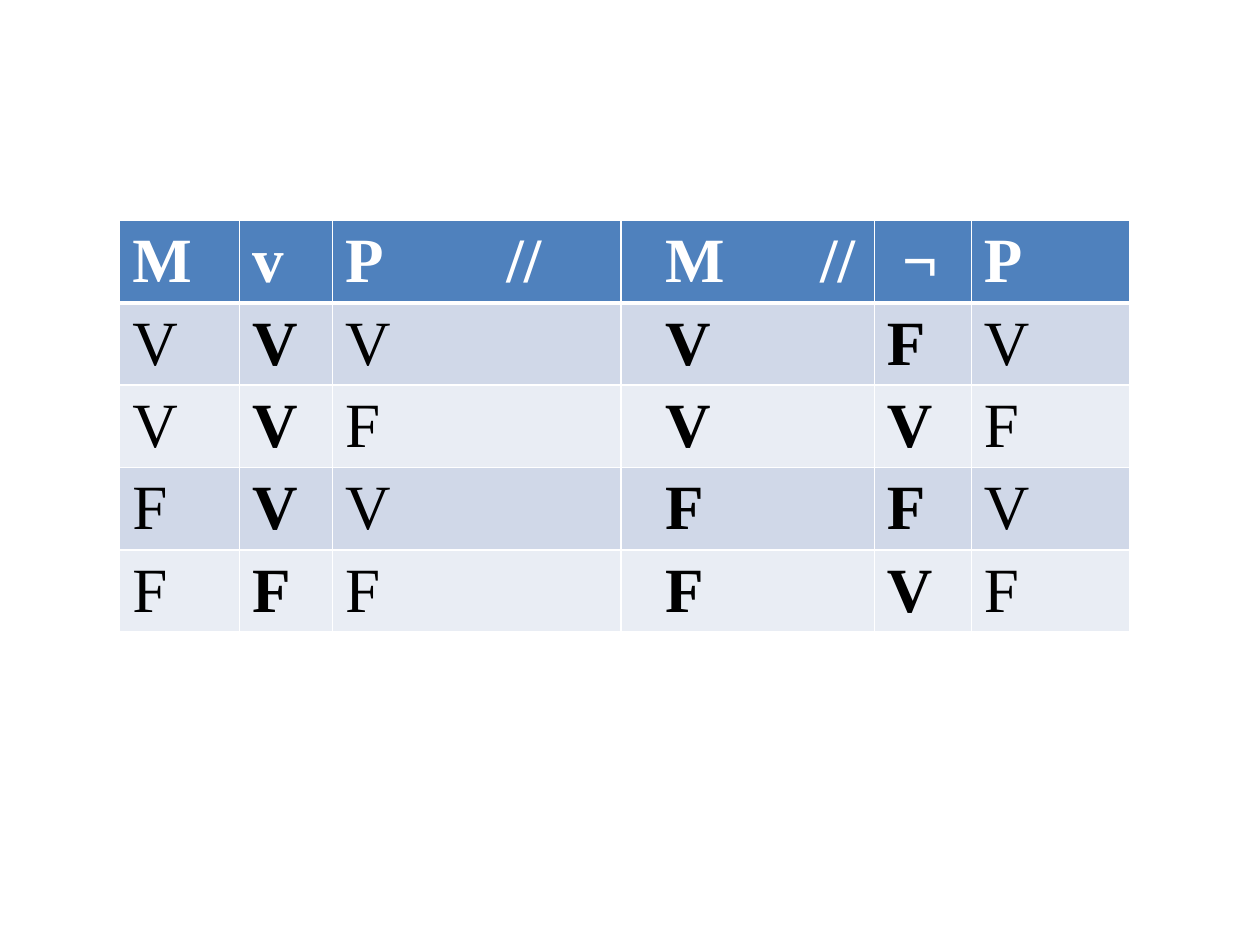
from dataclasses import dataclass
from lxml.etree import SubElement
from pptx import Presentation
from pptx.dml.color import RGBColor as RGB
from pptx.oxml.ns import qn
from pptx.util import Inches, Pt


@dataclass(frozen=True)
class Theme:
    font: str = "Times New Roman"
    size: int = 36
    head: str = "4F81BD"
    bands: tuple = ("D0D8E8", "E9EDF4")
    light: str = "FFFFFF"
    dark: str = "000000"


def edge(cell, side, width):
    line = SubElement(cell._tc.get_or_add_tcPr(), qn(f"a:ln{side}"), w=str(Pt(width)))
    fill = SubElement(line, qn("a:solidFill"))
    SubElement(fill, qn("a:srgbClr"), val=theme.light)


def tab_stop(para, pos):
    tabs = SubElement(para._p.get_or_add_pPr(), qn("a:tabLst"))
    SubElement(tabs, qn("a:tab"), pos=str(Inches(pos)), algn="l")


theme = Theme()
rows = [
    ("M", "v", "P\t//", "M\t//", "¬", "P"),
    *(tuple(line) for line in ("VVVVFV", "VVFVVF", "FVVFFV", "FFFFVF")),
]
widths = [0.95, 0.74, 2.29, 2.01, 0.77, 1.26]
row_height = 0.65
bold_cols = {1, 3, 4}
stops = {2: 1.28, 3: 1.23}

prs = Presentation()
prs.slide_width, prs.slide_height = Inches(10), Inches(7.5)
slide = prs.slides.add_slide(prs.slide_layouts[6])
frame = slide.shapes.add_table(
    len(rows), len(widths), Inches(0.95), Inches(1.75),
    Inches(sum(widths)), Inches(row_height * len(rows)))
table = frame.table
for col, width in zip(table.columns, widths):
    col.width = Inches(width)
for row in table.rows:
    row.height = Inches(row_height)

for r, line in enumerate(rows):
    is_head = r == 0
    for c, text in enumerate(line):
        cell = table.cell(r, c)
        for side in "LRTB":
            thick = (is_head and side == "B") or (r == 1 and side == "T")
            edge(cell, side, 3 if thick else 1)
        cell.fill.solid()
        cell.fill.fore_color.rgb = RGB.from_string(
            theme.head if is_head else theme.bands[(r - 1) % 2])

        # Inset the second premise and the negation sign from the column edge
        if c == 3:
            cell.margin_left = Inches(0.35)
        elif is_head and c == 4:
            cell.margin_left = Inches(0.22)

        para = cell.text_frame.paragraphs[0]
        para.text = text
        if is_head and c in stops:
            tab_stop(para, stops[c])
        font = para.runs[0].font
        font.name, font.size = theme.font, Pt(theme.size)
        font.bold = is_head or c in bold_cols
        font.color.rgb = RGB.from_string(theme.light if is_head else theme.dark)

prs.save("out.pptx")
